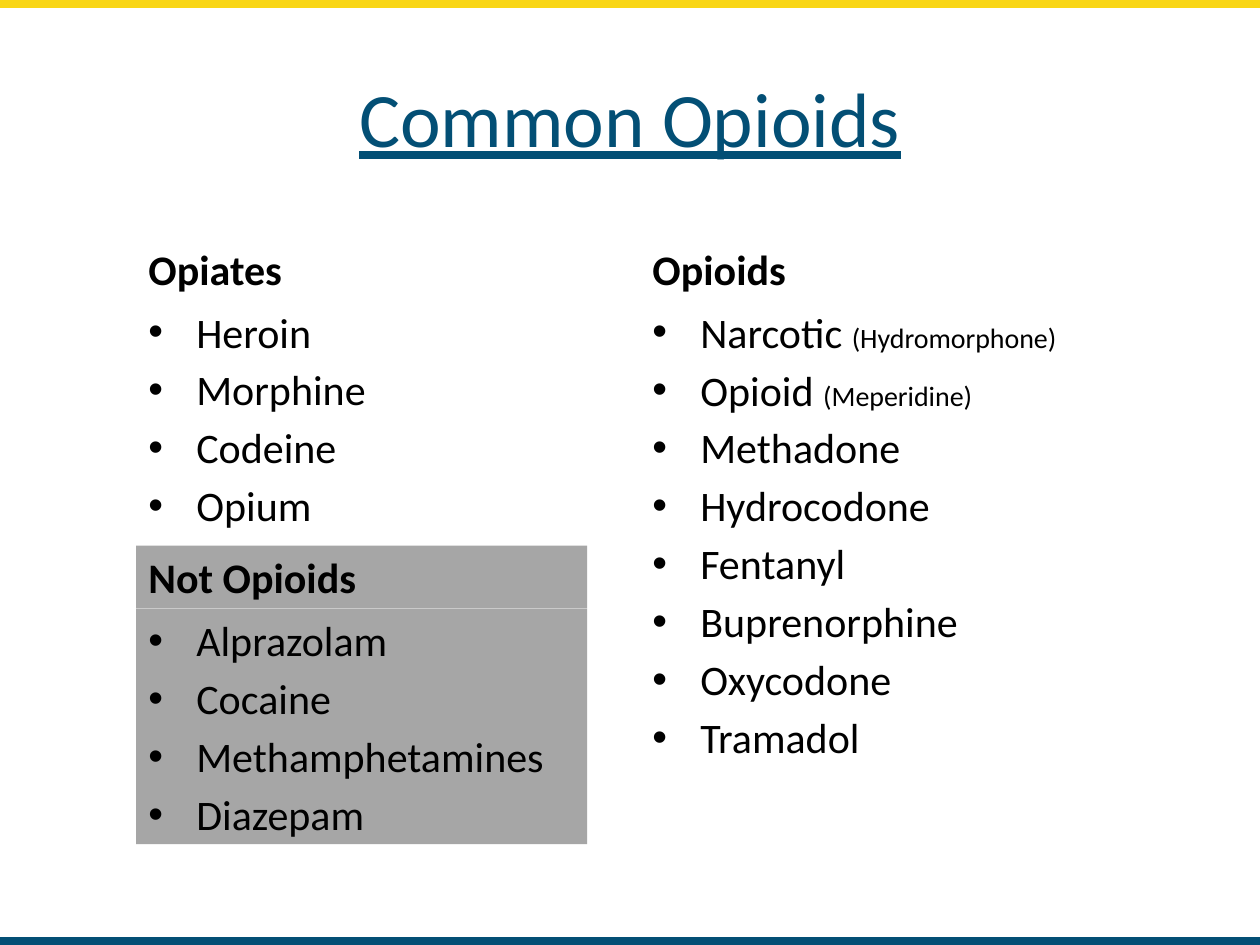
from lxml import etree
from pptx import Presentation
from pptx import util as u
from pptx.dml.color import RGBColor
from pptx.enum import shapes, text
from pptx.oxml import ns

COLORS = {"blue": "034F75", "yellow": "F9D616", "gray": "A6A6A6", "black": "000000"}

LEFT, RIGHT = 1.08, 5.08
HEADING_TOP, LIST_TOP = 1.68, 2.38
COLUMN_WIDTH, PANEL_WIDTH = 4.42, 3.58

OPIATES = ["Heroin", "Morphine", "Codeine", "Opium"]
OPIOIDS = [
    ("Narcotic ", "(Hydromorphone)"),
    ("Opioid ", "(Meperidine)"),
    "Methadone", "Hydrocodone", "Fentanyl", "Buprenorphine", "Oxycodone", "Tramadol",
]
NOT_OPIOIDS = ["Alprazolam", "Cocaine", "Methamphetamines", "Diazepam"]


class SlideBuilder:
    font = "Calibri"
    body_size = 24
    note_size = 16
    indent = u.Inches(0.38)
    item_gap = u.Pt(4.3)

    def __init__(self, slide):
        self.slide = slide

    def color(self, name):
        return RGBColor.from_string(COLORS[name])

    def rectangle(self, left, top, width, height, fill, outlined=False):
        box = self.slide.shapes.add_shape(
            shapes.MSO_SHAPE.RECTANGLE, *map(u.Inches, (left, top, width, height)))
        box.shadow.inherit = False
        box.fill.solid()
        box.fill.fore_color.rgb = self.color(fill)
        if outlined:
            box.line.color.rgb = self.color(fill)
            box.line.width = u.Pt(2)
        else:
            box.line.fill.background()
        return box

    def text_area(self, left, top, width, height, fill=None, anchor=text.MSO_ANCHOR.TOP):
        """Return the text frame of a plain text box or of a filled panel."""
        if fill:
            box = self.rectangle(left, top, width, height, fill)
        else:
            box = self.slide.shapes.add_textbox(
                *map(u.Inches, (left, top, width, height)))
        frame = box.text_frame
        frame.word_wrap = True
        frame.vertical_anchor = anchor
        return frame

    def run(self, para, words, size, color="black", bold=False, underline=False):
        span = para.add_run()
        span.text = words
        span.font.name = self.font
        span.font.size = u.Pt(size)
        span.font.color.rgb = self.color(color)
        span.font.bold = bold
        span.font.underline = underline

    def title(self, words):
        frame = self.text_area(0.5, 0.3, 9, 1.25, anchor=text.MSO_ANCHOR.MIDDLE)
        para = frame.paragraphs[0]
        para.alignment = text.PP_ALIGN.CENTER
        self.run(para, words, 44, "blue", underline=True)

    def heading(self, words, *area, **style):
        para = self.text_area(*area, **style).paragraphs[0]
        para.alignment = text.PP_ALIGN.LEFT
        self.run(para, words, self.body_size, bold=True)

    def bullet(self, para):
        properties = para._p.get_or_add_pPr()
        properties.set("marL", str(self.indent))
        properties.set("indent", str(-self.indent))
        etree.SubElement(properties, ns.qn("a:buFont"), typeface="Arial")
        etree.SubElement(properties, ns.qn("a:buChar"), char="•")

    def bullets(self, items, *area, **style):
        """Add a list; an item may be a pair of a name and a smaller note."""
        frame = self.text_area(*area, **style)
        for index, item in enumerate(items):
            para = frame.add_paragraph() if index else frame.paragraphs[0]
            self.bullet(para)
            para.alignment = text.PP_ALIGN.LEFT
            if index:
                para.space_before = self.item_gap
            name, note = item if isinstance(item, tuple) else (item, None)
            self.run(para, name, self.body_size)
            if note:
                self.run(para, note, self.note_size)


def main():
    deck = Presentation()
    deck.slide_width, deck.slide_height = u.Inches(10), u.Inches(7.5)
    page = SlideBuilder(deck.slides.add_slide(deck.slide_layouts[6]))

    page.rectangle(0, 7.45, 10, 0.05, "blue", outlined=True)
    page.rectangle(0, 0, 10, 0.05, "yellow", outlined=True)
    page.title("Common Opioids")

    columns = [("Opiates", OPIATES, LEFT, 1.87), ("Opioids", OPIOIDS, RIGHT, 4.32)]
    for name, items, left, height in columns:
        page.heading(name, left, HEADING_TOP, COLUMN_WIDTH, LIST_TOP - HEADING_TOP,
                     anchor=text.MSO_ANCHOR.BOTTOM)
        page.bullets(items, left, LIST_TOP, COLUMN_WIDTH, height)

    page.heading("Not Opioids", LEFT, 4.33, PANEL_WIDTH, 0.5, fill="gray")
    page.bullets(NOT_OPIOIDS, LEFT, 4.83, PANEL_WIDTH, 1.87, fill="gray")

    deck.save("out.pptx")


if __name__ == "__main__":
    main()
